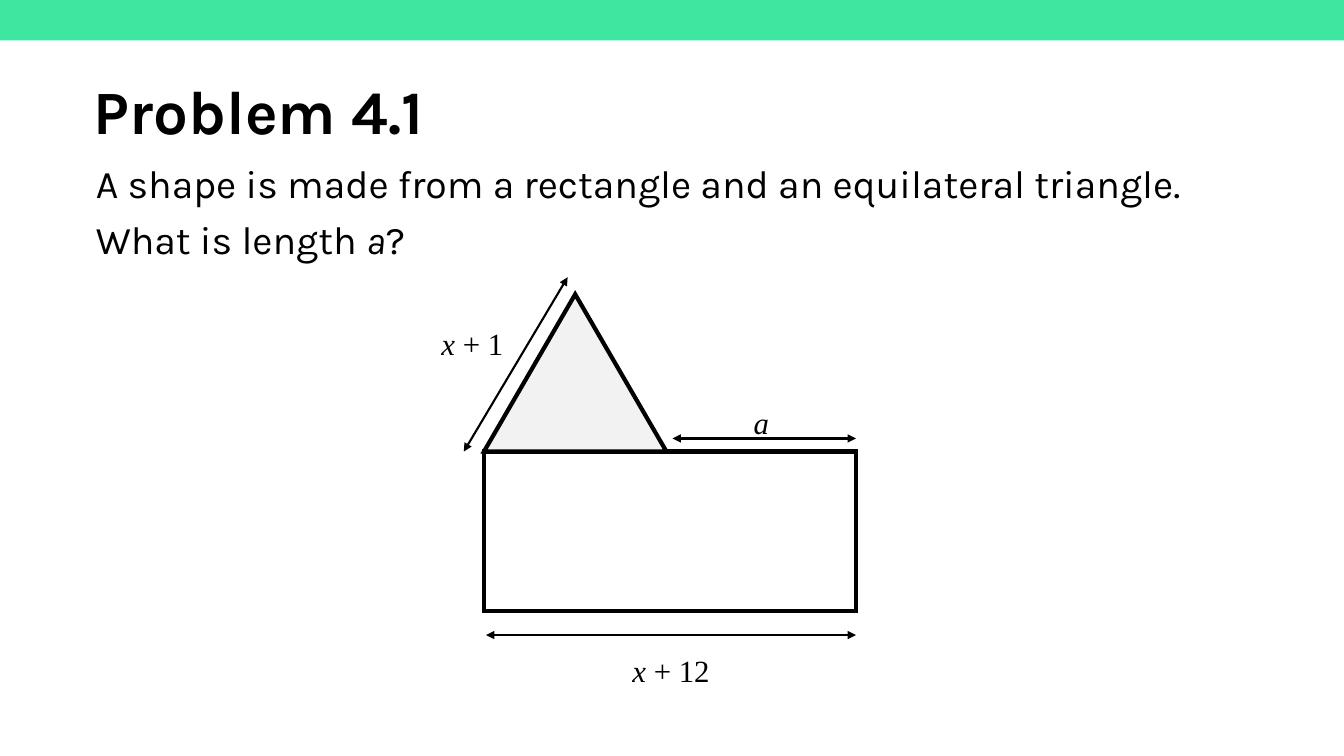
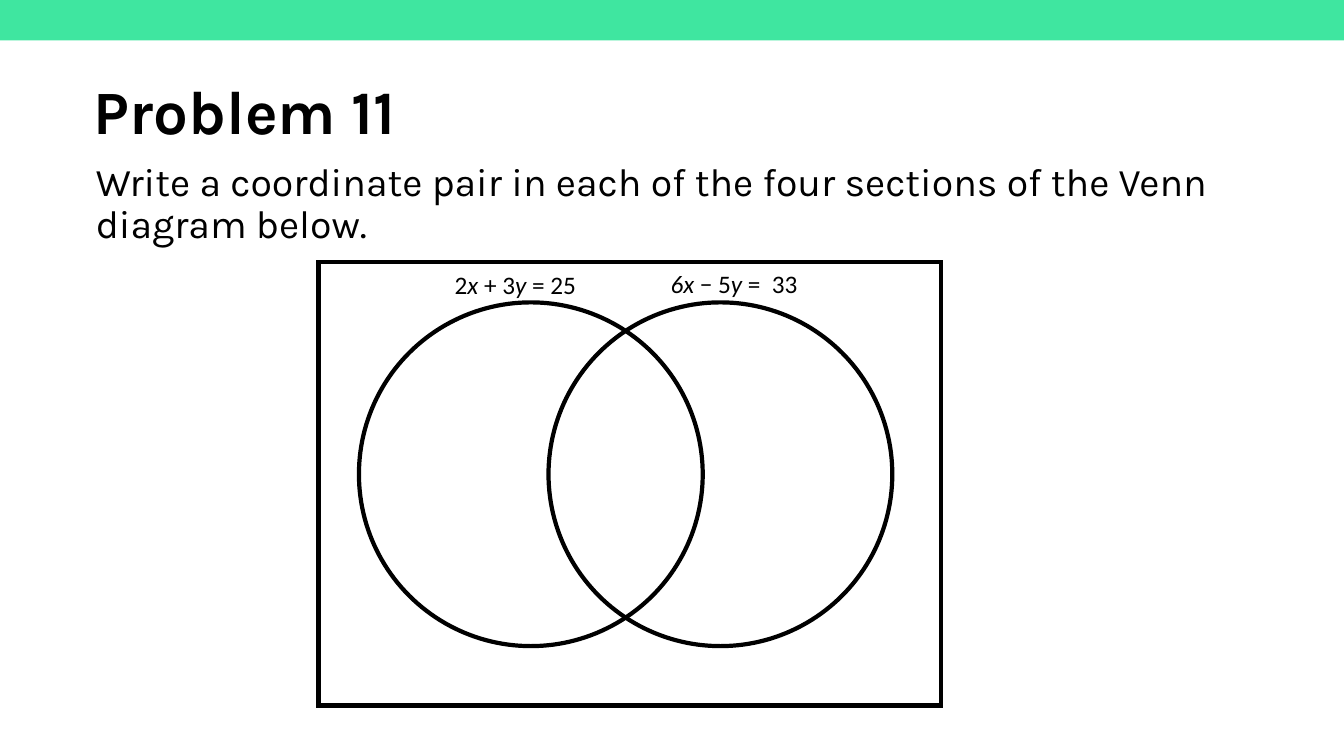
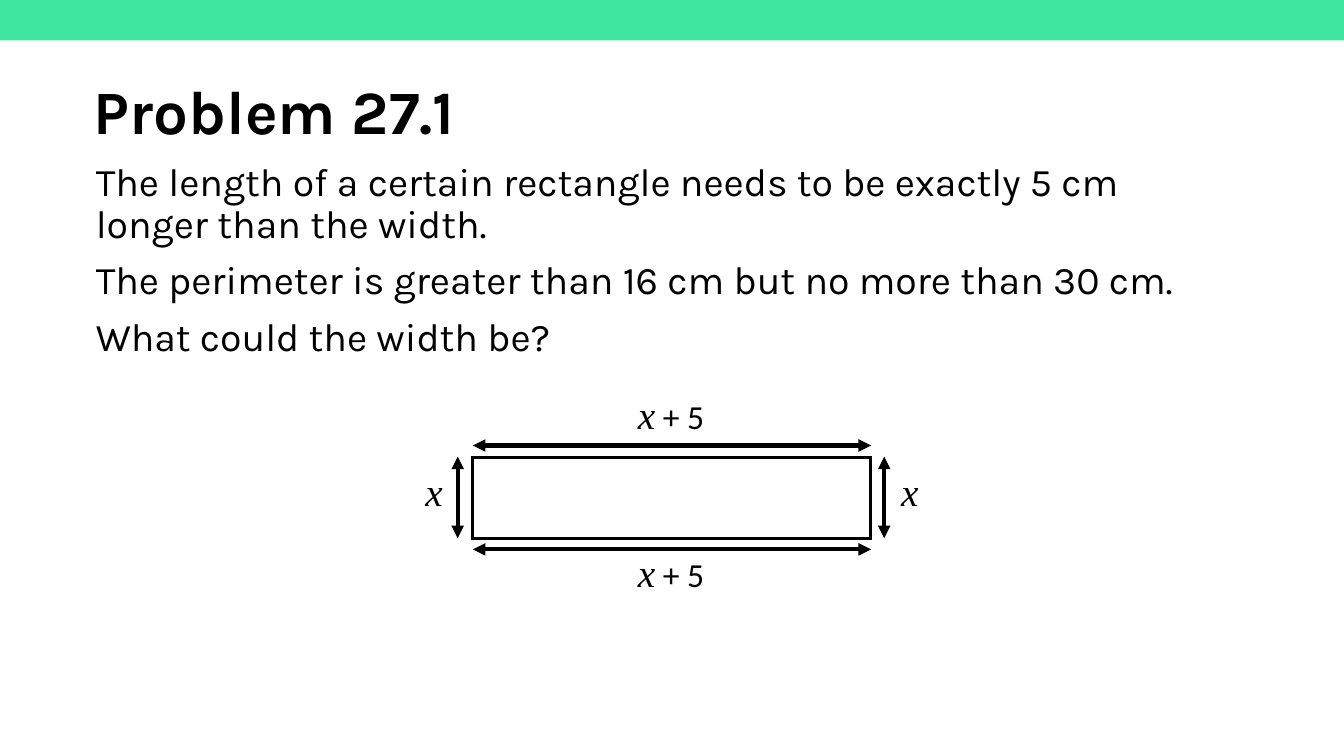
from dataclasses import dataclass
from typing import NamedTuple

from lxml.etree import SubElement
from pptx import Presentation
from pptx.dml.color import RGBColor
from pptx.enum.shapes import MSO_CONNECTOR, MSO_SHAPE
from pptx.enum.text import MSO_ANCHOR, MSO_AUTO_SIZE, PP_ALIGN
from pptx.oxml.ns import qn
from pptx.util import Pt

PX = 9144  # 100 px to the inch


class Box(NamedTuple):
    left: int
    top: int
    width: int
    height: int

    @property
    def right(self):
        return self.left + self.width

    @property
    def bottom(self):
        return self.top + self.height

    def emu(self):
        return [value * PX for value in self]


@dataclass(frozen=True)
class TextStyle:
    font: str
    size: int
    variable_font: str
    variable_size: int
    bold: bool = False
    line_spacing: float = 1.0
    gap: int = 0


def plain_style(font, size, **options):
    return TextStyle(font, size, font, size, **options)


@dataclass(frozen=True)
class Theme:
    ink: RGBColor = RGBColor(0, 0, 0)
    paper: RGBColor = RGBColor(255, 255, 255)
    band: RGBColor = RGBColor(0x3F, 0xE6, 0xA0)
    shade: RGBColor = RGBColor(0xF2, 0xF2, 0xF2)
    title: TextStyle = plain_style("Karla", 44, bold=True, line_spacing=0.9)
    body: TextStyle = plain_style("Karla", 28, line_spacing=0.9, gap=10)
    algebra: TextStyle = plain_style("Times New Roman", 22, line_spacing=1.15)
    equation: TextStyle = plain_style("Calibri", 18)
    dimension: TextStyle = TextStyle("Calibri", 24, "Times New Roman", 28,
                                     line_spacing=0.9)
    outline: float = 3
    thin_outline: float = 2.25
    thin_arrow: float = 1.5


THEME = Theme()
PAGE = Box(0, 0, 1333, 750)
BAND_BOX = Box(0, -2, 1333, 42)
TITLE_BOX = Box(83, 41, 1150, 145)


def write_lines(frame, lines, style, align=PP_ALIGN.LEFT):
    """Fill a text frame; a part between asterisks is an italic variable."""
    frame.word_wrap = True
    frame.auto_size = MSO_AUTO_SIZE.NONE
    for index, line in enumerate(lines):
        para = frame.add_paragraph() if index else frame.paragraphs[0]
        properties = para._p.get_or_add_pPr()
        properties.set("marL", "0")
        properties.set("indent", "0")
        SubElement(properties, qn("a:buNone"))
        para.alignment = align
        para.line_spacing = style.line_spacing
        para.space_before = Pt(style.gap if index else 0)
        for position, part in enumerate(line.split("*")):
            if not part:
                continue
            variable = position % 2 == 1
            span = para.add_run()
            span.text = part
            span.font.name = style.variable_font if variable else style.font
            span.font.size = Pt(style.variable_size if variable else style.size)
            span.font.bold = style.bold
            span.font.italic = variable
            span.font.color.rgb = THEME.ink


def add_label(slide, box, text, style, align=PP_ALIGN.CENTER):
    frame = slide.shapes.add_textbox(*box.emu()).text_frame
    frame.margin_left = frame.margin_right = 0
    frame.margin_top = frame.margin_bottom = 0
    write_lines(frame, [text], style, align)


def add_outline(slide, kind, box, width=THEME.outline, fill=None):
    shape = slide.shapes.add_shape(kind, *box.emu())
    shape.shadow.inherit = False
    if fill is None:
        shape.fill.background()
    else:
        shape.fill.solid()
        shape.fill.fore_color.rgb = fill
    shape.line.color.rgb = THEME.ink
    shape.line.width = Pt(width)
    SubElement(shape.element.spPr.find(qn("a:ln")), qn("a:miter"), lim="800000")


def add_double_arrow(slide, start, end, width):
    points = [value * PX for value in (*start, *end)]
    arrow = slide.shapes.add_connector(MSO_CONNECTOR.STRAIGHT, *points)
    arrow.line.color.rgb = THEME.ink
    arrow.line.width = Pt(width)
    properties = arrow.element.spPr
    for tip in ("a:headEnd", "a:tailEnd"):
        SubElement(properties.find(qn("a:ln")), qn(tip), type="triangle")
    SubElement(properties, qn("a:effectLst"))


def add_layout_band(layout, slide):
    """Draw the band and move it behind the placeholders of the layout."""
    band = slide.shapes.add_shape(MSO_SHAPE.RECTANGLE, *BAND_BOX.emu())
    band.shadow.inherit = False
    band.fill.solid()
    band.fill.fore_color.rgb = THEME.band
    band.line.fill.background()
    band.element.nvSpPr.cNvPr.id = 20
    layout.shapes.element.insert(2, band.element)


def add_problem(deck, title, lines, body_box):
    slide = deck.slides.add_slide(deck.slide_layouts[1])
    heading, body = slide.shapes.title, slide.placeholders[1]
    for holder, box in ((heading, TITLE_BOX), (body, body_box)):
        holder.left, holder.top, holder.width, holder.height = box.emu()
    heading.text_frame.vertical_anchor = MSO_ANCHOR.MIDDLE
    write_lines(heading.text_frame, [title], THEME.title)
    write_lines(body.text_frame, lines, THEME.body)
    return slide


def draw_triangle_on_rectangle(slide, box):
    """Draw the rectangle in the box, the triangle on it and the lengths."""
    base, height = 181, 156
    left, top, right, bottom = box.left, box.top, box.right, box.bottom
    add_outline(slide, MSO_SHAPE.RECTANGLE, box)
    add_outline(slide, MSO_SHAPE.ISOSCELES_TRIANGLE,
                Box(left, top - height, base, height), fill=THEME.shade)
    arrows = [
        ((left + base + 6, top - 13), (right, top - 13)),
        ((left - 20, top), (left + 83, top - 173)),
        ((left + 2, bottom + 24), (right, bottom + 24)),
    ]
    for start, end in arrows:
        add_double_arrow(slide, start, end, THEME.thin_arrow)
    labels = [
        ("*a*", Box(left + 259, top - 53, 32, 37)),
        ("*x *+ 1", Box(left - 69, top - 131, 115, 57)),
        ("*x *+ 12", Box(left + 128, bottom + 35, 115, 57)),
    ]
    for text, label_box in labels:
        add_label(slide, label_box, text, THEME.algebra)


def draw_venn(slide, box):
    diameter, step = 341, 188
    add_outline(slide, MSO_SHAPE.RECTANGLE, box)
    for index in range(2):
        circle = Box(box.left + 40 + index * step, box.top + 40, diameter, diameter)
        add_outline(slide, MSO_SHAPE.OVAL, circle)
    add_label(slide, Box(box.left + 135, box.top + 7, 163, 30),
              "2*x* + 3*y* = 25", THEME.equation, PP_ALIGN.LEFT)
    add_label(slide, Box(box.left + 310, box.top + 6, 204, 30),
              "*6x *− 5*y* =  33", THEME.equation)


def draw_measured_rectangle(slide, box):
    """Draw the rectangle in the box with an arrow and a label on each side."""
    add_outline(slide, MSO_SHAPE.RECTANGLE, box, THEME.thin_outline, THEME.paper)
    label_width, label_height = 113, 50
    label_left = box.left + (box.width - label_width) // 2
    label_top = box.top + (box.height - label_height) // 2
    for arrow_top, text_top in ((box.top - 12, box.top - 61),
                                (box.bottom + 11, box.bottom + 15)):
        add_double_arrow(slide, (box.left, arrow_top), (box.right + 1, arrow_top),
                         THEME.outline)
        add_label(slide, Box(label_left, text_top, label_width, label_height),
                  "*x* + 5", THEME.dimension)
    for arrow_left, text_left in ((box.left - 15, box.left - 95),
                                  (box.right + 14, box.right - 17)):
        add_double_arrow(slide, (arrow_left, box.top - 1), (arrow_left, box.bottom),
                         THEME.outline)
        add_label(slide, Box(text_left, label_top, label_width, label_height),
                  "*x*", THEME.dimension)


def main():
    deck = Presentation()
    deck.slide_width, deck.slide_height = PAGE.width * PX, PAGE.height * PX

    triangle_slide = add_problem(
        deck, "Problem 4.1",
        ["A shape is made from a rectangle and an equilateral triangle.",
         "What is length *a*?"],
        Box(85, 158, 1150, 512))
    add_layout_band(deck.slide_layouts[1], triangle_slide)
    draw_triangle_on_rectangle(triangle_slide, Box(480, 448, 369, 158))

    venn_slide = add_problem(
        deck, "Problem 11",
        ["Write a coordinate pair in each of the four sections of the Venn "
         "diagram below."],
        Box(85, 156, 1150, 75))
    draw_venn(venn_slide, Box(316, 260, 617, 440))

    perimeter_slide = add_problem(
        deck, "Problem 27.1",
        ["The length of a certain rectangle needs to be exactly 5 cm longer "
         "than the width.",
         "The perimeter is greater than 16 cm but no more than 30 cm.",
         "What could the width be?"],
        Box(85, 156, 1150, 210))
    draw_measured_rectangle(perimeter_slide, Box(469, 454, 394, 80))

    deck.save("out.pptx")


if __name__ == "__main__":
    main()
